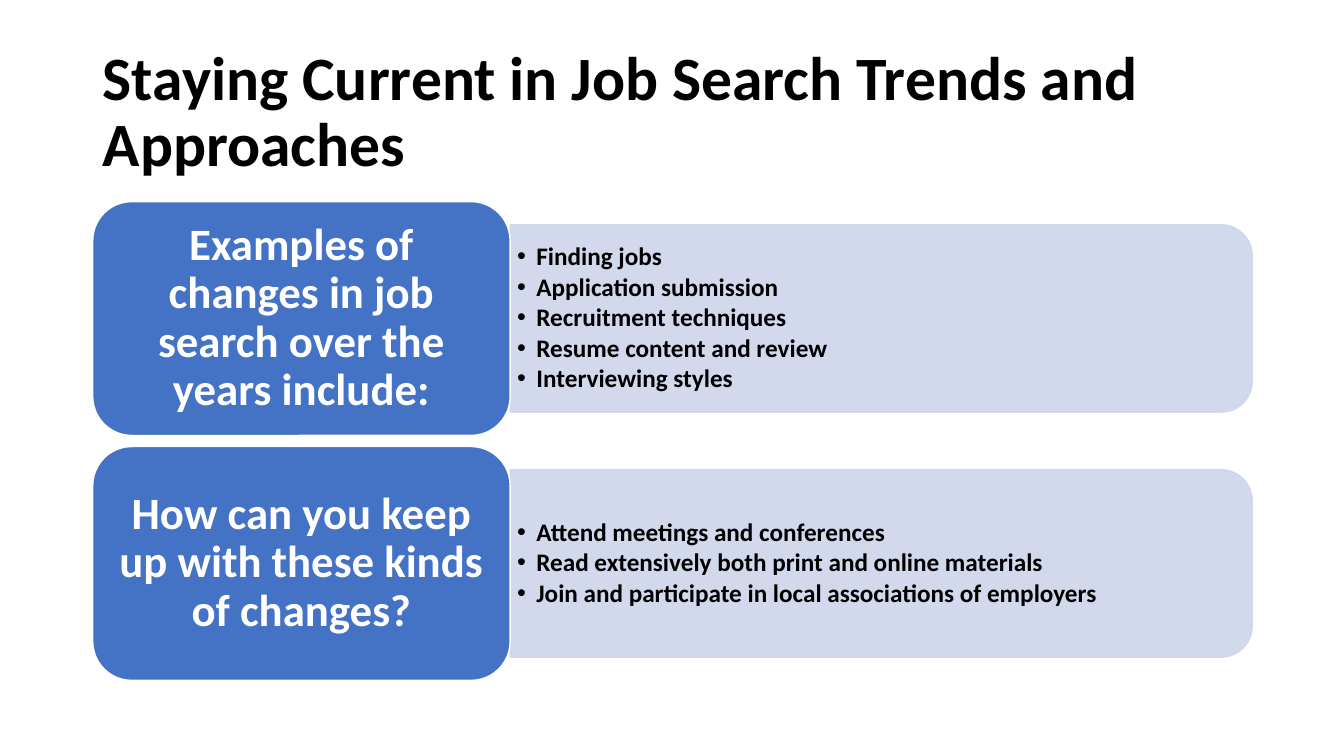
from dataclasses import dataclass

from lxml.etree import SubElement
from pptx import Presentation
from pptx.dml.color import RGBColor
from pptx.dml.fill import FillFormat
from pptx.enum.shapes import MSO_SHAPE
from pptx.enum.text import MSO_ANCHOR, MSO_AUTO_SIZE, PP_ALIGN
from pptx.oxml.ns import qn
from pptx.shapes.autoshape import Shape
from pptx.slide import Slide
from pptx.text.text import TextFrame
from pptx.util import Emu, Pt

EMU_PER_PX = 9144  # 100 px to the inch
COLORS = {"black": "000000", "white": "FFFFFF", "blue": "4472C4", "pale": "CFD5EA"}
FONT = "Calibri"

ROW_TOP, ROW_PITCH = 200, 243
CARD_LEFT, CARD_WIDTH, CARD_HEIGHT = 92, 414, 232
PANEL_LEFT, PANEL_WIDTH, PANEL_HEIGHT = 506, 736, 186
LIST_WIDTH, LIST_HEIGHT = 727, 168
LIST_INDENT = 19


@dataclass(frozen=True)
class Topic:
    heading: str
    points: tuple[str, ...]


TITLE = "Staying Current in Job Search Trends and Approaches"
TOPICS = (
    Topic(
        "Examples of changes in job search over the years include:",
        (
            "Finding jobs",
            "Application submission",
            "Recruitment techniques",
            "Resume content and review",
            "Interviewing styles",
        ),
    ),
    Topic(
        "How can you keep up with these kinds of changes?",
        (
            "Attend meetings and conferences",
            "Read extensively both print and online materials",
            "Join and participate in local associations of employers",
        ),
    ),
)


def px(value: float) -> Emu:
    return Emu(round(value * EMU_PER_PX))


def color(name: str) -> RGBColor:
    return RGBColor.from_string(COLORS[name])


def place(shape: Shape, left: float, top: float, width: float, height: float) -> None:
    shape.left, shape.top = px(left), px(top)
    shape.width, shape.height = px(width), px(height)


def set_insets(frame: TextFrame, horizontal: int, vertical: int) -> None:
    frame.margin_left = frame.margin_right = px(horizontal)
    frame.margin_top = frame.margin_bottom = px(vertical)


def format_text(frame: TextFrame, size: int, color_name: str, alignment: PP_ALIGN) -> None:
    frame.word_wrap = True
    frame.auto_size = MSO_AUTO_SIZE.NONE
    frame.vertical_anchor = MSO_ANCHOR.MIDDLE
    for paragraph in frame.paragraphs:
        paragraph.alignment = alignment
        paragraph.line_spacing = 0.9
        paragraph.space_before = Pt(0)
        for run in paragraph.runs:
            run.font.name = FONT
            run.font.size = Pt(size)
            run.font.bold = True
            run.font.color.rgb = color(color_name)


def paint(shape: Shape, fill_name: str, line_name: str) -> None:
    shape.shadow.inherit = False
    shape.fill.solid()
    shape.fill.fore_color.rgb = color(fill_name)
    shape.line.color.rgb = color(line_name)
    shape.line.width = Pt(1)


def add_panel(slide: Slide, middle: float) -> None:
    """Draw the pale panel, a shape turned so that its round corners face right."""
    center = PANEL_LEFT + PANEL_WIDTH / 2
    panel = slide.shapes.add_shape(MSO_SHAPE.ROUND_2_SAME_RECTANGLE, 0, 0, 0, 0)
    place(panel, center - PANEL_HEIGHT / 2, middle - PANEL_WIDTH / 2, PANEL_HEIGHT, PANEL_WIDTH)
    panel.rotation = 90
    paint(panel, "pale", "pale")
    for rgb in panel._element.spPr.iter(qn("a:srgbClr")):
        SubElement(rgb, qn("a:alpha"), val="90000")


def fill_list(slide: Slide, body: Shape, points: tuple[str, ...], middle: float) -> None:
    """Fill the body placeholder and bring it in front of its panel."""
    slide.shapes._spTree.append(body._element)
    place(body, PANEL_LEFT, middle - LIST_HEIGHT / 2, LIST_WIDTH, LIST_HEIGHT)
    frame = body.text_frame
    frame.text = "\n".join(points)
    set_insets(frame, 7, 4)
    format_text(frame, 18, "black", PP_ALIGN.LEFT)
    for paragraph in frame.paragraphs:
        paragraph.space_after = Pt(2.4)
        properties = paragraph._p.get_or_add_pPr()
        properties.set("marL", str(px(LIST_INDENT)))
        properties.set("indent", str(px(-LIST_INDENT)))


def add_card(slide: Slide, heading: str, top: int) -> None:
    card = slide.shapes.add_shape(MSO_SHAPE.ROUNDED_RECTANGLE, 0, 0, 0, 0)
    place(card, CARD_LEFT, top, CARD_WIDTH, CARD_HEIGHT)
    paint(card, "blue", "white")
    card.text_frame.text = heading
    set_insets(card.text_frame, 13, 7)
    format_text(card.text_frame, 32, "white", PP_ALIGN.CENTER)


def main() -> None:
    presentation = Presentation()
    presentation.slide_width, presentation.slide_height = px(1333), px(750)
    slide = presentation.slides.add_slide(presentation.slide_layouts.get_by_name("Two Content"))
    title, *bodies = slide.placeholders

    place(title, 92, 40, 1150, 145)
    title.text_frame.text = TITLE
    format_text(title.text_frame, 44, "black", PP_ALIGN.LEFT)

    for row, (topic, body) in enumerate(zip(TOPICS, bodies)):
        top = ROW_TOP + row * ROW_PITCH
        middle = top + CARD_HEIGHT / 2
        add_panel(slide, middle)
        fill_list(slide, body, topic.points, middle)
        add_card(slide, topic.heading, top)

    presentation.save("out.pptx")


if __name__ == "__main__":
    main()
